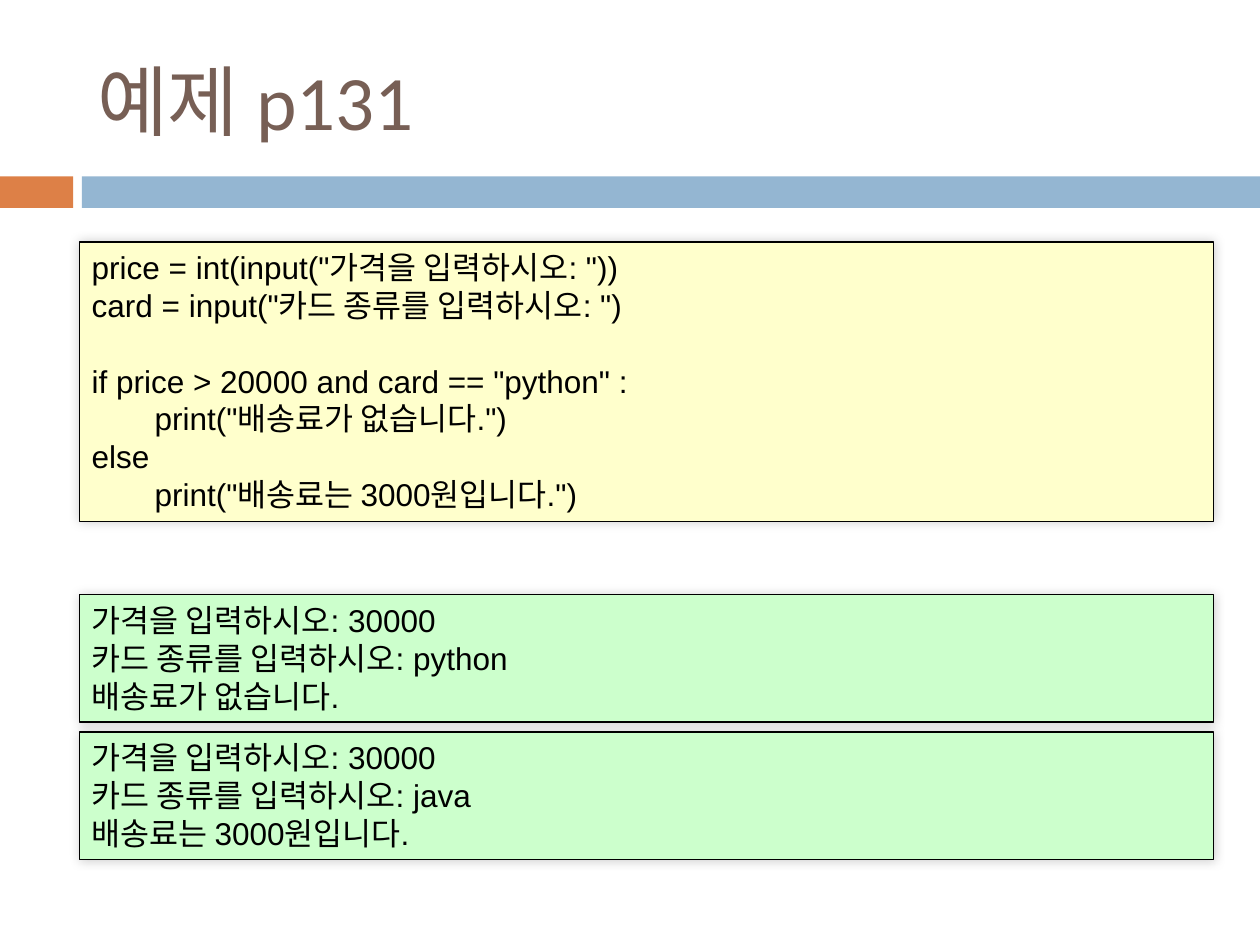
from dataclasses import dataclass

from lxml.etree import SubElement
from pptx import Presentation
from pptx.dml.color import RGBColor
from pptx.enum.shapes import MSO_SHAPE
from pptx.enum.text import MSO_ANCHOR, MSO_AUTO_SIZE, PP_ALIGN
from pptx.oxml.ns import qn
from pptx.util import Inches, Pt


@dataclass(frozen=True)
class Theme:
    head: str = "775F55"
    accent: str = "DD8047"
    band: str = "94B6D2"
    code: str = "FFFFCC"
    result: str = "CCFFCC"
    ink: str = "000000"
    head_font: str = "Calibri"
    body_font: str = "Arial"
    head_size: float = 44
    body_size: float = 18
    line_gap: float = 21.6


class Deck:
    def __init__(self, theme):
        self.theme = theme
        self.show = Presentation()
        self.show.slide_width = Inches(10)
        self.show.slide_height = Inches(7.5)
        self.slide = self.show.slides.add_slide(self.show.slide_layouts[5])

    def add_text(self, para, text, font, size, color):
        para.alignment = PP_ALIGN.LEFT
        run = para.add_run()
        run.text = text
        run.font.name = font
        run.font.size = Pt(size)
        run.font.color.rgb = RGBColor.from_string(color)

    def title(self, text, left, top, width, height):
        shape = self.slide.shapes.title
        shape.left, shape.top = Inches(left), Inches(top)
        shape.width, shape.height = Inches(width), Inches(height)
        frame = shape.text_frame
        frame.auto_size = MSO_AUTO_SIZE.NONE
        frame.vertical_anchor = MSO_ANCHOR.MIDDLE
        look = self.theme
        self.add_text(frame.paragraphs[0], text, look.head_font, look.head_size, look.head)

    def bar(self, left, top, width, height, color):
        shape = self.slide.shapes.add_shape(
            MSO_SHAPE.RECTANGLE, Inches(left), Inches(top), Inches(width), Inches(height)
        )
        shape.shadow.inherit = False
        shape.fill.solid()
        shape.fill.fore_color.rgb = RGBColor.from_string(color)
        shape.line.fill.background()
        return shape

    def shade(self, shape):
        effect = shape.element.spPr.find(qn("a:effectLst"))
        outer = SubElement(
            effect, qn("a:outerShdw"), blurRad=str(Pt(6)), dist="0", dir="18900000"
        )
        color = SubElement(outer, qn("a:srgbClr"), val=self.theme.ink)
        SubElement(color, qn("a:alpha"), val="20000")

    def panel(self, top, height, color, blocks):
        look = self.theme
        shape = self.bar(0.63, top, 9, height, color)
        shape.line.color.rgb = RGBColor.from_string(look.ink)
        shape.line.width = Pt(0.75)
        self.shade(shape)
        frame = shape.text_frame
        frame.word_wrap = True
        frame.auto_size = MSO_AUTO_SIZE.SHAPE_TO_FIT_TEXT
        frame.vertical_anchor = MSO_ANCHOR.TOP
        para = frame.paragraphs[0]
        for part, lines in enumerate(blocks):
            for row, text in enumerate(lines):
                if part or row:
                    para = frame.add_paragraph()
                if part and not row:
                    para.space_before = Pt(look.line_gap)
                self.add_text(para, text, look.body_font, look.body_size, look.ink)


def main():
    theme = Theme()
    deck = Deck(theme)
    deck.bar(0, 1.4, 0.58, 0.25, theme.accent)
    deck.bar(0.65, 1.4, 9.35, 0.25, theme.band)
    deck.title("예제 p131", 0.67, 0.25, 8.92, 1.08)

    setup = [
        'price = int(input("가격을 입력하시오: "))',
        'card = input("카드 종류를 입력하시오: ")',
    ]
    branch = [
        'if price > 20000 and card == "python" :',
        '\tprint("배송료가 없습니다.")',
        "else",
        '\tprint("배송료는 3000원입니다.")',
    ]
    deck.panel(1.92, 2.22, theme.code, [setup, branch])

    cases = [("python", "배송료가 없습니다."), ("java", "배송료는 3000원입니다.")]
    for row, (card, reply) in enumerate(cases):
        lines = ["가격을 입력하시오: 30000", f"카드 종류를 입력하시오: {card}", reply]
        deck.panel(4.72 + row * 1.09, 1.01, theme.result, [lines])
    deck.show.save("out.pptx")


if __name__ == "__main__":
    main()
